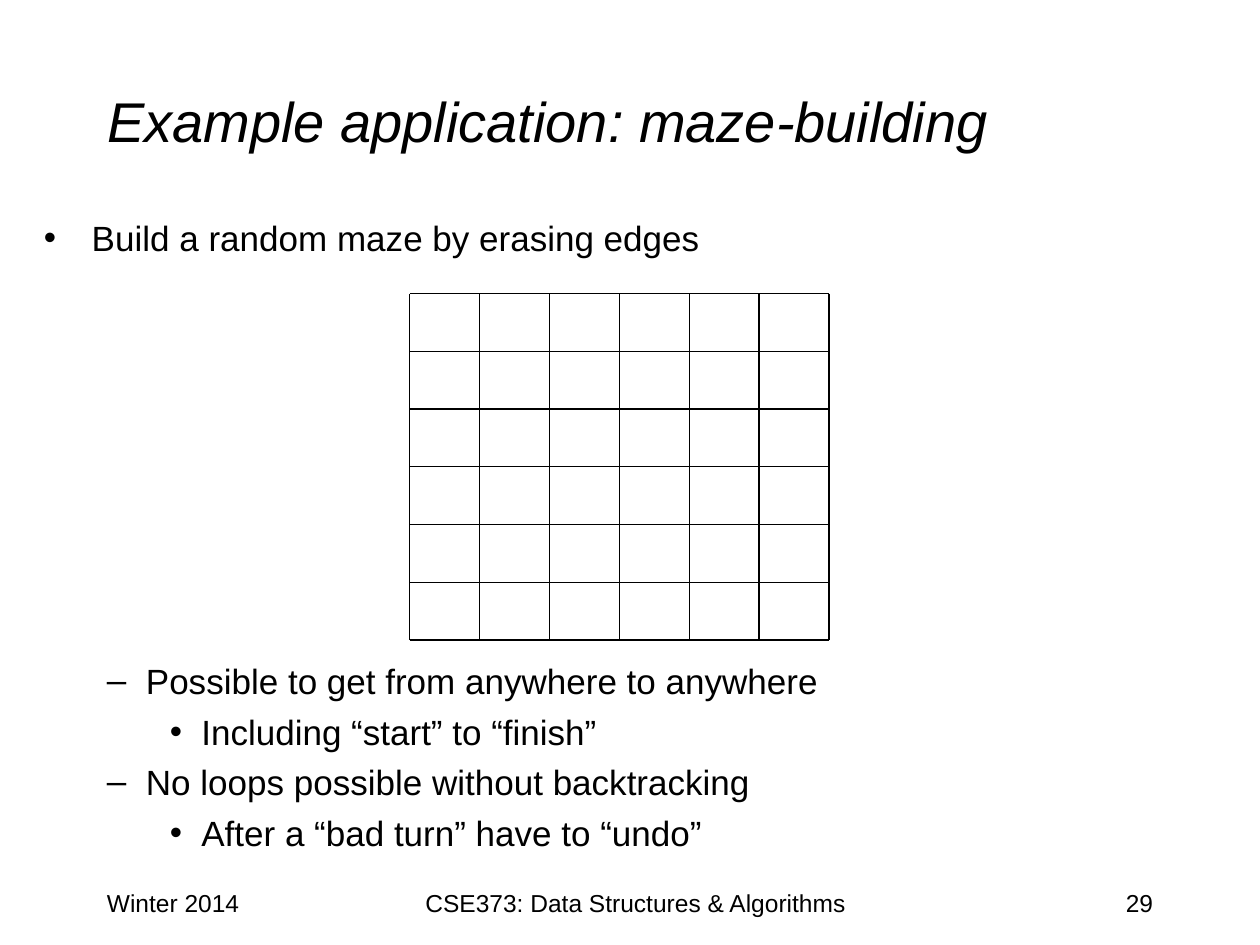
import pptx
import pptx.util
import pptx.dml.color
import pptx.enum.text
import pptx.enum.shapes
import pptx.oxml
import pptx.oxml.ns

Inches = pptx.util.Inches
Pt = pptx.util.Pt
ALIGN = pptx.enum.text.PP_ALIGN
ANCHOR = pptx.enum.text.MSO_ANCHOR
BLACK = pptx.dml.color.RGBColor(0, 0, 0)
NS = pptx.oxml.ns.nsdecls("a")


def style(para, size, align=ALIGN.LEFT, italic=False):
    para.alignment = align
    for run in para.runs:
        run.font.name = "Arial"
        run.font.size = Pt(size)
        run.font.italic = italic
        run.font.color.rgb = BLACK


def edge(group, x1, y1, x2, y2):
    line = group.shapes.add_connector(
        pptx.enum.shapes.MSO_CONNECTOR.STRAIGHT,
        Inches(x1), Inches(y1), Inches(x2), Inches(y2))
    line.line.color.rgb = BLACK
    line.line.width = Pt(0.75)
    line._element.spPr.append(pptx.oxml.parse_xml(f"<a:effectLst {NS}/>"))


deck = pptx.Presentation()
deck.slide_width, deck.slide_height = Inches(10), Inches(7.5)
slide = deck.slides.add_slide(deck.slide_layouts[5])

# Title
title = slide.shapes.title
title.left, title.top = Inches(0.75), Inches(0.33)
title.width, title.height = Inches(8.5), Inches(1.25)
title.text_frame.text = "Example application: maze-building"
title.text_frame.vertical_anchor = ANCHOR.MIDDLE
style(title.text_frame.paragraphs[0], 32, italic=True)

# Bullets, with room for the maze after the first: text, level, space before
points = [
    ("Build a random maze by erasing edges", 0, 0),
    ("Possible to get from anywhere to anywhere", 1, 229),
    ("Including “start” to “finish”", 2, 5),
    ("No loops possible without backtracking", 1, 5),
    ("After a “bad turn” have to “undo”", 2, 5),
]
marks = [("•", 0.38, 0.38), ("–", 0.81, 0.31), ("•", 1.25, 0.25)]
body = slide.shapes.add_textbox(
    Inches(0.25), Inches(1.67), Inches(8.5), Inches(4.92))
frame = body.text_frame
frame.word_wrap = True
frame.text = "\n".join(text for text, level, space in points)
for para, (text, level, space) in zip(frame.paragraphs, points):
    style(para, 20)
    para.level = level
    para.space_before = Pt(space)
    mark, left, hang = marks[level]
    props = para._p.get_or_add_pPr()
    props.set("marL", str(Inches(left)))
    props.set("indent", str(-Inches(hang)))
    props.append(pptx.oxml.parse_xml(f'<a:buFont {NS} typeface="Arial"/>'))
    props.append(pptx.oxml.parse_xml(f'<a:buChar {NS} char="{mark}"/>'))

# Footer
for text, left, width, align in [
    ("Winter 2014", 0.75, 2.08, ALIGN.LEFT),
    ("29", 7.17, 2.08, ALIGN.RIGHT),
    ("CSE373: Data Structures & Algorithms", 3.17, 3.75, ALIGN.CENTER),
]:
    box = slide.shapes.add_textbox(
        Inches(left), Inches(7), Inches(width), Inches(0.5))
    box.text_frame.word_wrap = True
    box.text_frame.text = text
    style(box.text_frame.paragraphs[0], 14, align)

# Maze: each cell owns its top and right edges
COUNT = 6
LEFT, TOP, RIGHT, BASE = 3.25, 2.33, 6.58, 5.08
wide, high = (RIGHT - LEFT) / COUNT, (BASE - TOP) / COUNT
maze = slide.shapes.add_group_shape()
for row in range(COUNT):
    for col in range(COUNT):
        x, y = LEFT + col * wide, TOP + row * high
        edge(maze, x, y, x + wide, y)
        edge(maze, x + wide, y, x + wide, y + high)

# Bottom and left walls close the maze
edge(maze, RIGHT, BASE, LEFT, BASE)
edge(maze, LEFT, BASE, LEFT, TOP)

deck.save("out.pptx")
